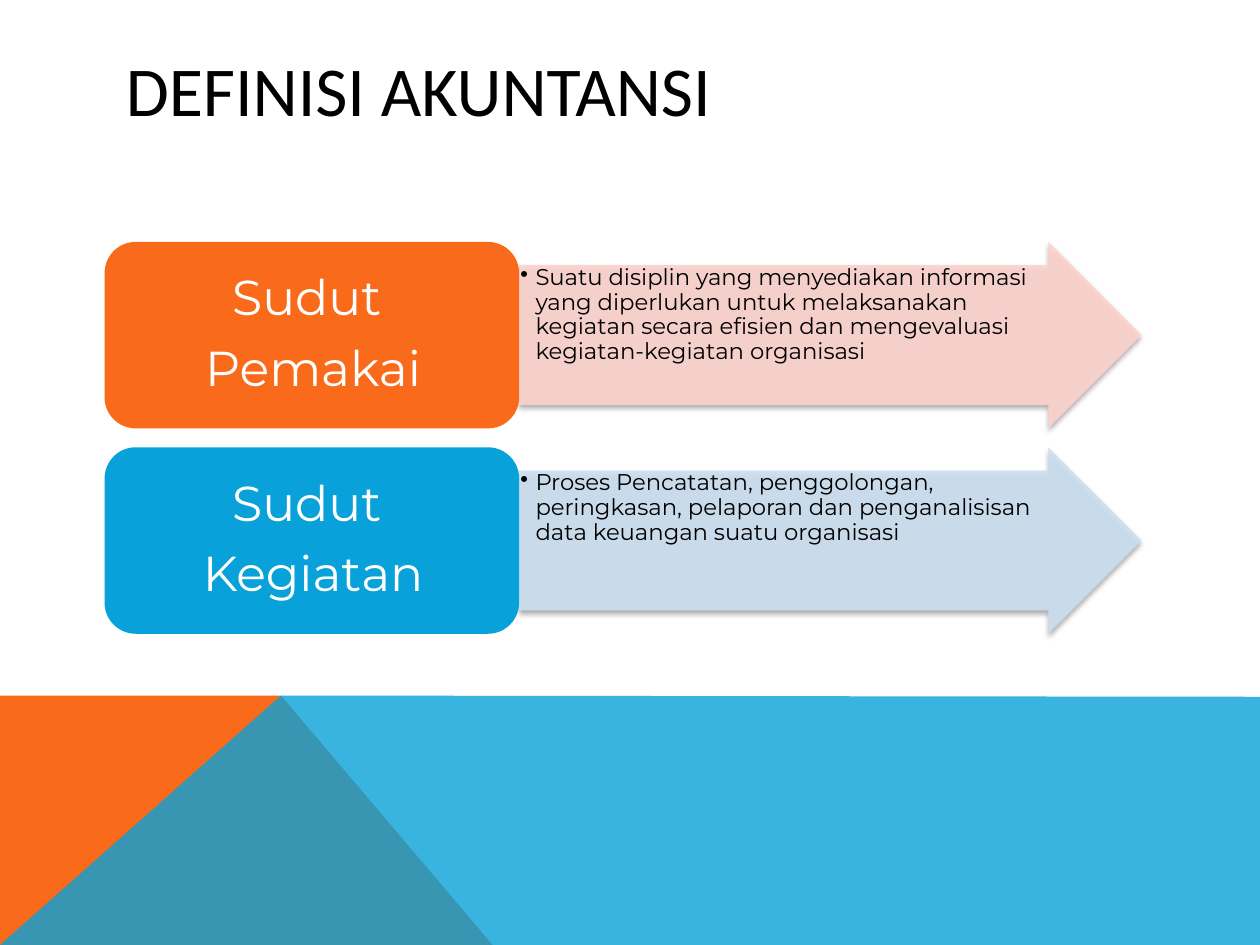
"""Build the slide on the two viewpoints that define accounting."""
from pptx import Presentation
from pptx.dml.color import RGBColor
from pptx.enum.shapes import MSO_SHAPE
from pptx.enum.text import MSO_ANCHOR, PP_ALIGN
from pptx.oxml import parse_xml
from pptx.oxml.ns import nsdecls, qn
from pptx.util import Inches, Pt

RIGHT_ARROW, ROUNDED = MSO_SHAPE.RIGHT_ARROW, MSO_SHAPE.ROUNDED_RECTANGLE
TOP, MIDDLE = MSO_ANCHOR.TOP, MSO_ANCHOR.MIDDLE
LEFT, CENTER = PP_ALIGN.LEFT, PP_ALIGN.CENTER
SHADOW = (f'<a:outerShdw {nsdecls("a")} blurRad="{Pt(3.1)}" dist="{Pt(1.8)}" dir="5400000" '
          'rotWithShape="0"><a:srgbClr val="000000"><a:alpha val="35000"/></a:srgbClr></a:outerShdw>')
BULLET = f'<a:buChar {nsdecls("a")} char="•"/>'


def paint(target, color, opacity=100):
    target.fill.solid()
    target.fill.fore_color.rgb = RGBColor.from_string(color)
    if opacity < 100:
        color_element = target.element.spPr.find(".//" + qn("a:srgbClr"))
        color_element.append(parse_xml(f'<a:alpha {nsdecls("a")} val="{opacity * 1000}"/>'))


def add_text(lines, box, size, color, font="Montserrat", align=LEFT, anchor=TOP,
             margins=(0.1, 0.05), line_spacing=1.0, space_after=0, bullet=False):
    frame = slide.shapes.add_textbox(*map(Inches, box)).text_frame
    frame.word_wrap = True
    frame.vertical_anchor = anchor
    frame.margin_left = frame.margin_right = Inches(margins[0])
    frame.margin_top = frame.margin_bottom = Inches(margins[1])
    for index, line in enumerate(lines):
        paragraph = frame.paragraphs[0] if index == 0 else frame.add_paragraph()
        paragraph.alignment = align
        paragraph.line_spacing = line_spacing
        paragraph.space_after = Pt(space_after)
        run = paragraph.add_run()
        run.text = line
        run.font.name = font
        run.font.size = Pt(size)
        paint(run.font, color)
        if bullet:
            properties = paragraph._p.get_or_add_pPr()
            properties.set("marL", str(Inches(0.12)))
            properties.set("indent", str(Inches(-0.12)))
            properties.append(parse_xml(BULLET))


presentation = Presentation()
presentation.slide_width, presentation.slide_height = Inches(10), Inches(7.5)
slide = presentation.slides.add_slide(presentation.slide_layouts[6])

bands = [
    ([(0, 7.5), (0, 5.52), (2.23, 5.52), (3.91, 7.5)], "F96A1B", 100),
    ([(0, 7.5), (2.23, 5.52), (10, 5.53), (10, 7.5)], "08A1D9", 80),
]
for points, color, opacity in bands:
    corners = [(Inches(x), Inches(y)) for x, y in points]
    builder = slide.shapes.build_freeform(*corners[0])
    builder.add_line_segments(corners[1:], close=True)
    band = builder.convert_to_shape()
    band.shadow.inherit = False
    band.line.fill.background()
    paint(band, color, opacity)

add_text(["DEFINISI AKUNTANSI"], (0.9, 0.4, 8.22, 0.6), 40, "000000",
         font="Calibri", anchor=MIDDLE)

viewpoints = [
    (["Sudut ", "Pemakai"], "F96A1B", "FDD4CD",
     "Suatu disiplin yang menyediakan informasi yang diperlukan untuk melaksanakan "
     "kegiatan secara efisien dan mengevaluasi kegiatan-kegiatan organisasi"),
    (["Sudut ", "Kegiatan"], "08A1D9", "CCE0F1",
     "Proses Pencatatan, penggolongan, peringkasan, pelaporan dan penganalisisan "
     "data keuangan suatu organisasi"),
]
for row, (label, label_color, arrow_color, definition) in enumerate(viewpoints):
    top = 1.92 + row * 1.63
    arrow = slide.shapes.add_shape(RIGHT_ARROW, *map(Inches, (4.12, top, 4.94, 1.48)))
    arrow.adjustments[0] = 0.75
    arrow.adjustments[1] = 0.5
    arrow.shadow.inherit = False
    arrow.element.spPr.find(qn("a:effectLst")).append(parse_xml(SHADOW))
    arrow.line.fill.background()
    paint(arrow, arrow_color, 90)
    add_text([definition], (4.12, top + 0.18, 4.38, 1.11), 13, "000000",
             margins=(0.01, 0.01), line_spacing=0.9, space_after=2, bullet=True)

    card = slide.shapes.add_shape(ROUNDED, *map(Inches, (0.83, top, 3.29, 1.48)))
    card.shadow.inherit = False
    card.line.fill.background()
    paint(card, label_color)
    add_text(label, (0.91, top + 0.07, 3.15, 1.34), 28, "FFFFFF", align=CENTER,
             anchor=MIDDLE, margins=(0.12, 0.06), line_spacing=0.9, space_after=10)

presentation.save("out.pptx")
